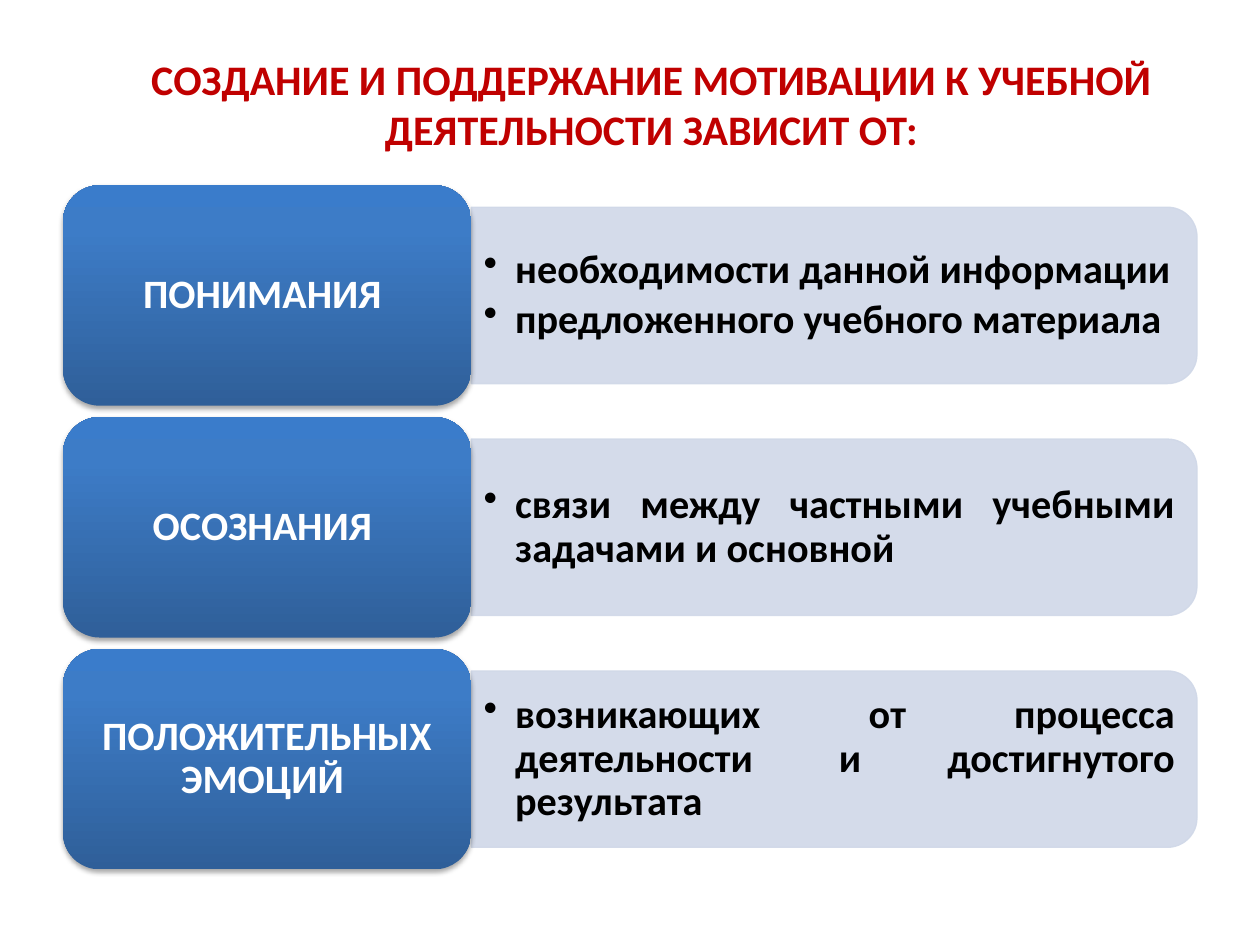
"""Build a slide listing what learning motivation depends on."""
from dataclasses import dataclass

from lxml import etree
from pptx import Presentation
from pptx import util as u
from pptx.dml import color
from pptx.enum import shapes, text
from pptx.oxml import ns

FONT = "Calibri"
BODY_SIZE = 23
FIRST_TOP, PITCH = 1.47, 1.84
LABEL_LEFT, LABEL_WIDTH, LABEL_HEIGHT = 0.5, 3.24, 1.75
LABEL_MARGIN = 0.09
PANEL_LEFT, PANEL_WIDTH, PANEL_HEIGHT = 3.74, 5.76, 1.4
PANEL_TEXT_WIDTH, PANEL_TEXT_HEIGHT = 5.69, 1.26
GRADIENT = [(0, "2F5F99"), (80, "3D7CC7"), (100, "3A7CCB")]


@dataclass
class Factor:
    label: str
    points: list[str]


FACTORS = [
    Factor("ПОНИМАНИЯ ", ["необходимости данной информации",
                          "предложенного учебного материала"]),
    Factor("ОСОЗНАНИЯ ", ["связи между частными учебными задачами и основной"]),
    Factor("ПОЛОЖИТЕЛЬНЫХ ЭМОЦИЙ ",
           ["возникающих от процесса деятельности и достигнутого результата"]),
]


def rgb(value: str) -> color.RGBColor:
    """Turn a hex string into a colour."""
    return color.RGBColor.from_string(value)


def add_child(parent, tag: str, **attributes):
    """Append a DrawingML element and return it."""
    values = {name: str(value) for name, value in attributes.items()}
    return etree.SubElement(parent, ns.qn(f"a:{tag}"), values)


def add_run(paragraph, content: str, size: float, hex_color: str) -> None:
    """Add one bold run."""
    run = paragraph.add_run()
    run.text = content
    run.font.name = FONT
    run.font.size = u.Pt(size)
    run.font.bold = True
    run.font.color.rgb = rgb(hex_color)


def add_text(slide, left: float, top: float, width: float, height: float,
             lines: list[str], hex_color: str, bulleted: bool) -> None:
    """Add a vertically centred text box, centred or bulleted and justified."""
    box = slide.shapes.add_textbox(*map(u.Inches, (left, top, width, height)))
    frame = box.text_frame
    frame.word_wrap = True
    frame.vertical_anchor = text.MSO_ANCHOR.MIDDLE
    for index, line in enumerate(lines):
        paragraph = frame.add_paragraph() if index else frame.paragraphs[0]
        paragraph.line_spacing = 0.9
        paragraph.alignment = text.PP_ALIGN.CENTER
        if bulleted:
            paragraph.alignment = text.PP_ALIGN.JUSTIFY
            paragraph.level = 1
            paragraph.space_after = u.Pt(0.15 * BODY_SIZE)
            properties = paragraph._p.get_or_add_pPr()
            properties.set("marL", str(u.Inches(0.25)))
            properties.set("indent", str(u.Inches(-0.25)))
            add_child(properties, "buChar", char="•")
        add_run(paragraph, line, BODY_SIZE, hex_color)


def add_panel(slide, middle: float) -> None:
    """Add a pale panel rounded on its right side."""
    left = PANEL_LEFT + (PANEL_WIDTH - PANEL_HEIGHT) / 2
    panel = slide.shapes.add_shape(
        shapes.MSO_SHAPE.ROUND_2_SAME_RECTANGLE, u.Inches(left),
        u.Inches(middle - PANEL_WIDTH / 2), u.Inches(PANEL_HEIGHT),
        u.Inches(PANEL_WIDTH))
    panel.rotation = 90
    panel.shadow.inherit = False
    panel.line.width = u.Pt(0.75)
    for fill in (panel.fill, panel.line.fill):
        fill.solid()
        fill.fore_color.rgb = rgb("D0D8E8")
    for element in panel._element.spPr.iter(ns.qn("a:srgbClr")):
        add_child(element, "alpha", val=90000)


def add_label_box(slide, top: float) -> None:
    """Add a blue gradient box with a soft shadow."""
    box = slide.shapes.add_shape(
        shapes.MSO_SHAPE.ROUNDED_RECTANGLE,
        *map(u.Inches, (LABEL_LEFT, top, LABEL_WIDTH, LABEL_HEIGHT)))
    box.line.fill.background()
    box.fill.gradient()
    properties = box._element.spPr
    gradient = properties.find(ns.qn("a:gradFill"))
    for element in list(gradient):
        gradient.remove(element)
    stops = add_child(gradient, "gsLst")
    for position, hex_color in GRADIENT:
        add_child(add_child(stops, "gs", pos=position * 1000), "srgbClr", val=hex_color)
    add_child(gradient, "lin", ang=270 * 60000, scaled=0)
    box.shadow.inherit = False
    shadow = add_child(properties.find(ns.qn("a:effectLst")), "outerShdw",
                       blurRad=u.Pt(3.1), dist=u.Pt(1.8), dir=90 * 60000, rotWithShape=0)
    add_child(add_child(shadow, "srgbClr", val="000000"), "alpha", val=35000)


def add_factor(slide, factor: Factor, top: float) -> None:
    """Draw one row: the panel with its points and the label box."""
    middle = top + LABEL_HEIGHT / 2
    add_panel(slide, middle)
    add_text(slide, PANEL_LEFT, middle - PANEL_TEXT_HEIGHT / 2, PANEL_TEXT_WIDTH,
             PANEL_TEXT_HEIGHT, factor.points, "000000", True)
    add_label_box(slide, top)
    add_text(slide, LABEL_LEFT + LABEL_MARGIN, top + LABEL_MARGIN,
             LABEL_WIDTH - 2 * LABEL_MARGIN, LABEL_HEIGHT - 2 * LABEL_MARGIN,
             [factor.label], "FFFFFF", False)


def add_title(slide) -> None:
    """Place and format the title placeholder."""
    title = slide.shapes.title
    title.left, title.top, title.width, title.height = map(u.Inches, (0.67, 0.6, 9, 0.85))
    frame = title.text_frame
    frame.word_wrap = True
    frame.auto_size = text.MSO_AUTO_SIZE.NONE
    frame.vertical_anchor = text.MSO_ANCHOR.MIDDLE
    paragraph = frame.paragraphs[0]
    paragraph.alignment = text.PP_ALIGN.CENTER
    add_run(paragraph, "СОЗДАНИЕ И ПОДДЕРЖАНИЕ МОТИВАЦИИ К УЧЕБНОЙ ДЕЯТЕЛЬНОСТИ ЗАВИСИТ ОТ:",
            24, "C00000")
    paragraph.add_line_break()
    paragraph.font.size = u.Pt(24)
    add_child(paragraph._p, "endParaRPr", sz=2400)


def main() -> None:
    """Build and save the presentation."""
    presentation = Presentation()
    presentation.slide_width, presentation.slide_height = u.Inches(10), u.Inches(7.5)
    slide = presentation.slides.add_slide(presentation.slide_layouts[5])
    add_title(slide)
    for index, factor in enumerate(FACTORS):
        add_factor(slide, factor, FIRST_TOP + index * PITCH)
    presentation.save("out.pptx")


if __name__ == "__main__":
    main()
